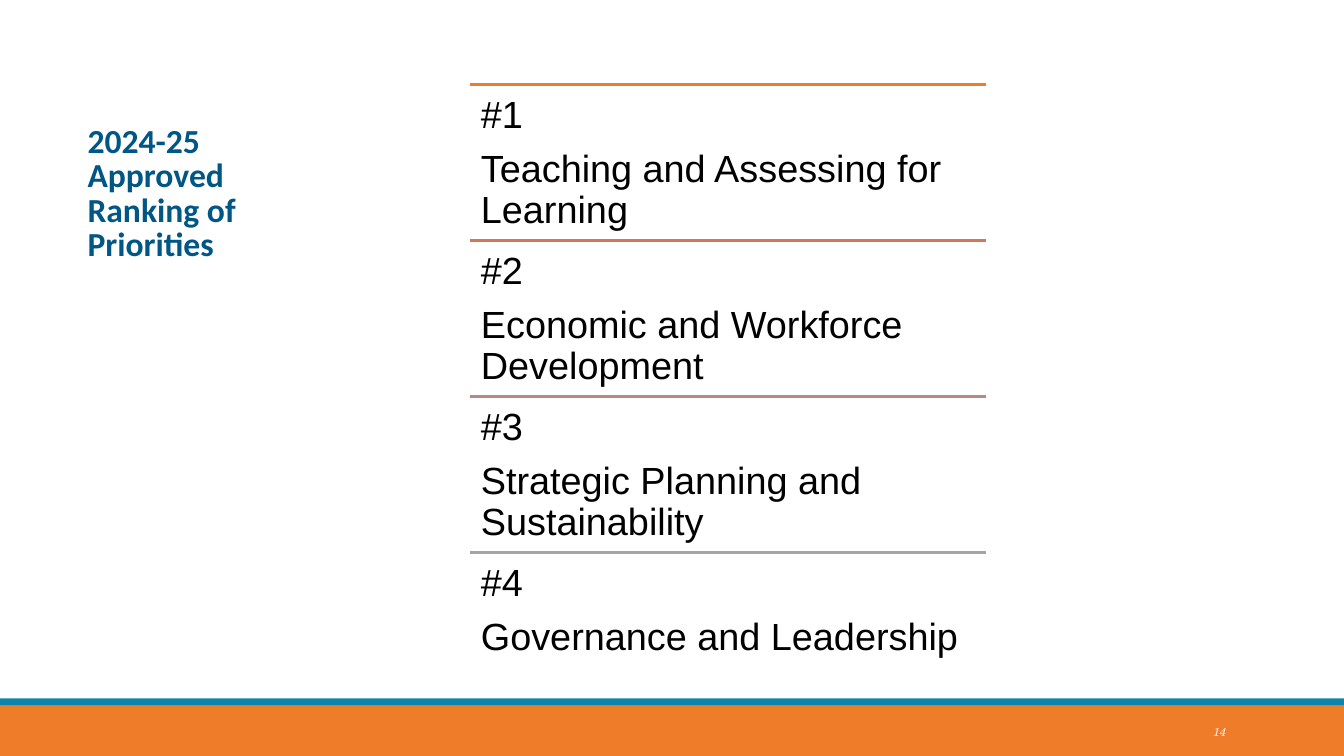
from pptx import Presentation
from pptx.dml.color import RGBColor
from pptx.enum.shapes import MSO_CONNECTOR, MSO_SHAPE
from pptx.enum.text import MSO_ANCHOR, PP_ALIGN
from pptx.oxml.ns import qn
from pptx.util import Inches, Pt
from lxml import etree

ORANGE = RGBColor(0xEE, 0x7C, 0x29)
BLUE = RGBColor(0x0D, 0x85, 0xAB)
NAVY = RGBColor(0x00, 0x56, 0x85)
BLACK = RGBColor(0x00, 0x00, 0x00)
PALE = RGBColor(0xF5, 0xF5, 0xF5)
RUST = RGBColor(0xD1, 0x79, 0x57)
ROSE = RGBColor(0xB9, 0x88, 0x81)
GREY = RGBColor(0xA5, 0xA5, 0xA5)

WIDTH, HEIGHT = 13.33, 7.5
PRIORITIES = [
    ("Teaching and Assessing for Learning", ORANGE),
    ("Economic and Workforce Development", RUST),
    ("Strategic Planning and Sustainability", ROSE),
    ("Governance and Leadership", GREY),
]
TITLE_FONT = {"name": "Calibri", "size": Pt(24), "bold": True}
NUMBER_FONT = {"name": "TeX Gyre Schola", "size": Pt(8.2), "italic": True}
PRIORITY_FONT = {"name": "Arial", "size": Pt(27)}


def set_all(target, values):
    for name, value in values.items():
        setattr(target, name, value)


def add_text(page, box, lines, font, color, para_format, anchor, insets=(0.1, 0.05)):
    """Add a wrapped text box with one paragraph per line; \\v breaks a line."""
    frame = page.shapes.add_textbox(*map(Inches, box)).text_frame
    across, down = map(Inches, insets)
    set_all(frame, {
        "word_wrap": True, "vertical_anchor": anchor,
        "margin_left": across, "margin_right": across,
        "margin_top": down, "margin_bottom": down,
    })
    for index, line in enumerate(lines):
        para = frame.add_paragraph() if index else frame.paragraphs[0]
        para.text = line
        set_all(para, para_format)
        for span in para.runs:
            set_all(span.font, font)
            span.font.color.rgb = color


def add_band(page, box, color):
    band = page.shapes.add_shape(MSO_SHAPE.RECTANGLE, *map(Inches, box))
    band.shadow.inherit = False
    band.fill.solid()
    band.fill.fore_color.rgb = color
    band.line.fill.background()


def add_footer(page, box, number):
    left, top, width, height = box
    stripe = 0.07
    add_band(page, (left, top + stripe, width, height - stripe), ORANGE)
    add_band(page, (left, top, width, stripe), BLUE)
    add_text(page, (left + 10.83, top + 0.13, 1.43, 0.4), [number], NUMBER_FONT, PALE,
             {"alignment": PP_ALIGN.RIGHT, "space_after": Pt(6)}, MSO_ANCHOR.MIDDLE)


def add_title(page, box):
    add_text(page, box, ["2024-25\vApproved \vRanking of Priorities"], TITLE_FONT, NAVY,
             {"line_spacing": 0.85}, MSO_ANCHOR.BOTTOM)


def add_rule(page, left, top, width, color):
    ends = map(Inches, (left, top, left + width, top))
    rule = page.shapes.add_connector(MSO_CONNECTOR.STRAIGHT, *ends)
    rule.line.color.rgb = color
    rule.line.width = Pt(2)
    etree.SubElement(rule.element.spPr, qn("a:effectLst"))


def add_priorities(page, box):
    """Stack the ranked priorities in equal rows, each under its own rule."""
    left, top, width, height = box
    row_height = height / len(PRIORITIES)
    for rank, (priority, color) in enumerate(PRIORITIES, start=1):
        row_top = top + (rank - 1) * row_height
        add_rule(page, left, row_top, width, color)
        add_text(page, (left, row_top, width, row_height), [f"#{rank}", priority],
                 PRIORITY_FONT, BLACK, {"line_spacing": 0.9, "space_after": Pt(9.45)},
                 MSO_ANCHOR.TOP, (0.11, 0.11))


def main():
    deck = Presentation()
    deck.slide_width, deck.slide_height = Inches(WIDTH), Inches(HEIGHT)
    page = deck.slides.add_slide(deck.slide_layouts[6])
    add_footer(page, (0, 6.93, WIDTH, 0.57), "14")
    add_title(page, (0.77, 0.84, 2.93, 1.82))
    add_priorities(page, (4.66, 0.84, 5.12, 6.19))
    deck.save("out.pptx")


if __name__ == "__main__":
    main()
